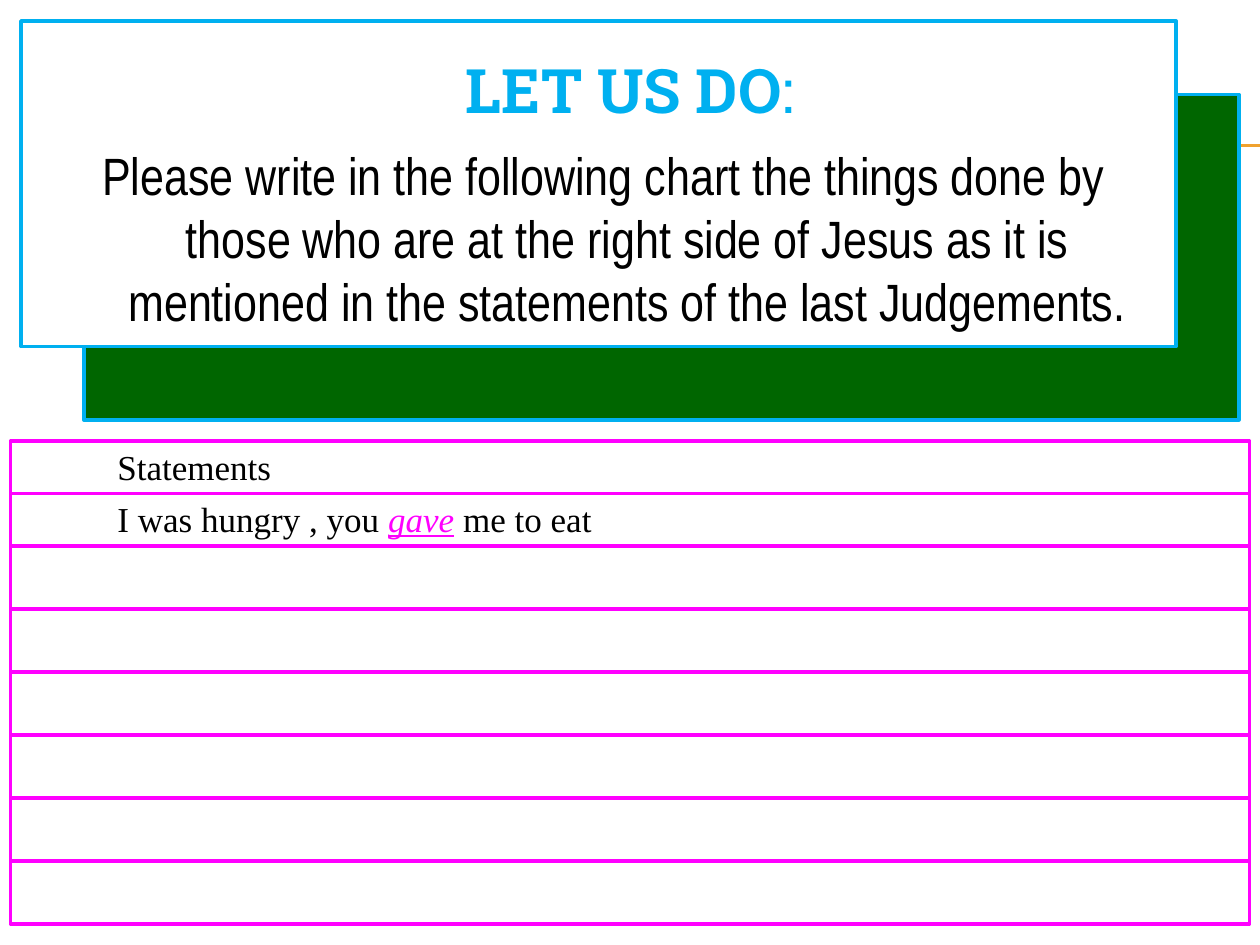
from dataclasses import dataclass
from itertools import accumulate

from lxml.etree import SubElement
from pptx import Presentation
from pptx.dml.color import RGBColor
from pptx.enum.shapes import MSO_CONNECTOR, MSO_SHAPE
from pptx.enum.text import MSO_ANCHOR, MSO_AUTO_SIZE, PP_ALIGN
from pptx.oxml.ns import qn
from pptx.util import Pt

INK = {
    "white": "FFFFFF",
    "black": "000000",
    "green": "006600",
    "blue": "00B0F0",
    "pink": "FF00FF",
    "gold": "F0A22E",
}


@dataclass(frozen=True)
class Box:
    left: float
    top: float
    width: float
    height: float
    fill: str = "white"
    line: str = "pink"


def tint(name: str) -> RGBColor:
    return RGBColor.from_string(INK[name])


def draw_box(slide, box: Box) -> None:
    shape = slide.shapes.add_shape(
        MSO_SHAPE.RECTANGLE, Pt(box.left), Pt(box.top), Pt(box.width), Pt(box.height)
    )
    shape.shadow.inherit = False
    shape.fill.solid()
    shape.fill.fore_color.rgb = tint(box.fill)
    shape.line.color.rgb = tint(box.line)
    shape.line.width = Pt(2)


def draw_rule(slide, top: float) -> None:
    rule = slide.shapes.add_connector(
        MSO_CONNECTOR.STRAIGHT, Pt(40), Pt(top), Pt(720), Pt(top)
    )
    rule.line.color.rgb = tint("gold")
    rule.line.width = Pt(0.75)
    SubElement(rule._element.spPr, qn("a:effectLst"))


def add_run(par, text: str, *, font: str, size: float, color: str = "black",
            bold: bool = False, italic: bool = False, under: bool = False) -> None:
    run = par.add_run()
    run.text = text
    face = run.font
    face.name, face.size = font, Pt(size)
    face.bold, face.italic, face.underline = bold, italic, under
    face.color.rgb = tint(color)


def place(slide, shape, left: float, top: float, width: float, height: float):
    shape.left, shape.top = Pt(left), Pt(top)
    shape.width, shape.height = Pt(width), Pt(height)
    slide.shapes._spTree.append(shape._element)
    frame = shape.text_frame
    frame.word_wrap = True
    frame.auto_size = MSO_AUTO_SIZE.NONE
    par = frame.paragraphs[0]
    par.alignment = PP_ALIGN.CENTER
    return frame, par


def add_label(slide, top: float):
    label = slide.shapes.add_textbox(Pt(60), Pt(top), Pt(360), Pt(31.5))
    frame = label.text_frame
    frame.word_wrap = True
    frame.auto_size = MSO_AUTO_SIZE.SHAPE_TO_FIT_TEXT
    return frame.paragraphs[0]


def main() -> None:
    deck = Presentation()
    deck.slide_width, deck.slide_height = Pt(720), Pt(540)
    slide = deck.slides.add_slide(deck.slide_layouts[1])
    title, body = slide.placeholders

    for top in (82.8, 83.5):
        draw_rule(slide, top)
    draw_box(slide, Box(48, 54, 660, 186, "green", "blue"))
    draw_box(slide, Box(12, 12, 660, 186, "white", "blue"))

    frame, par = place(slide, title, 0, 18, 720, 66)
    frame.vertical_anchor = MSO_ANCHOR.MIDDLE
    head = {"font": "Roboto Slab", "size": 35, "color": "blue"}
    add_run(par, "LET US DO", bold=True, **head)
    add_run(par, ":", **head)

    frame, par = place(slide, body, 24, 78, 642, 72)
    frame.vertical_anchor = MSO_ANCHOR.TOP
    par.space_before = Pt(6)
    props = par._p.get_or_add_pPr()
    props.set("marL", str(Pt(27)))
    props.set("indent", str(Pt(-27)))
    SubElement(props, qn("a:buNone"))
    add_run(
        par,
        "Please write in the following chart the things done by those who are "
        "at the right side of Jesus as it is mentioned in the statements of the "
        "last Judgements.",
        font="Arial Narrow",
        size=30,
    )

    rows = [30] * 2 + [36] * 6
    tops = list(accumulate(rows[:-1], initial=252))
    for top, height in zip(tops, rows):
        draw_box(slide, Box(6, top, 708, height))

    serif = {"font": "Times New Roman", "size": 20}
    add_run(add_label(slide, tops[0] - 1.25), "Statements", **serif)
    par = add_label(slide, tops[1] - 1.25)
    add_run(par, "I was hungry , you ", **serif)
    add_run(par, "gave", color="pink", italic=True, under=True, **serif)
    add_run(par, " me to eat", **serif)

    deck.save("out.pptx")


if __name__ == "__main__":
    main()
